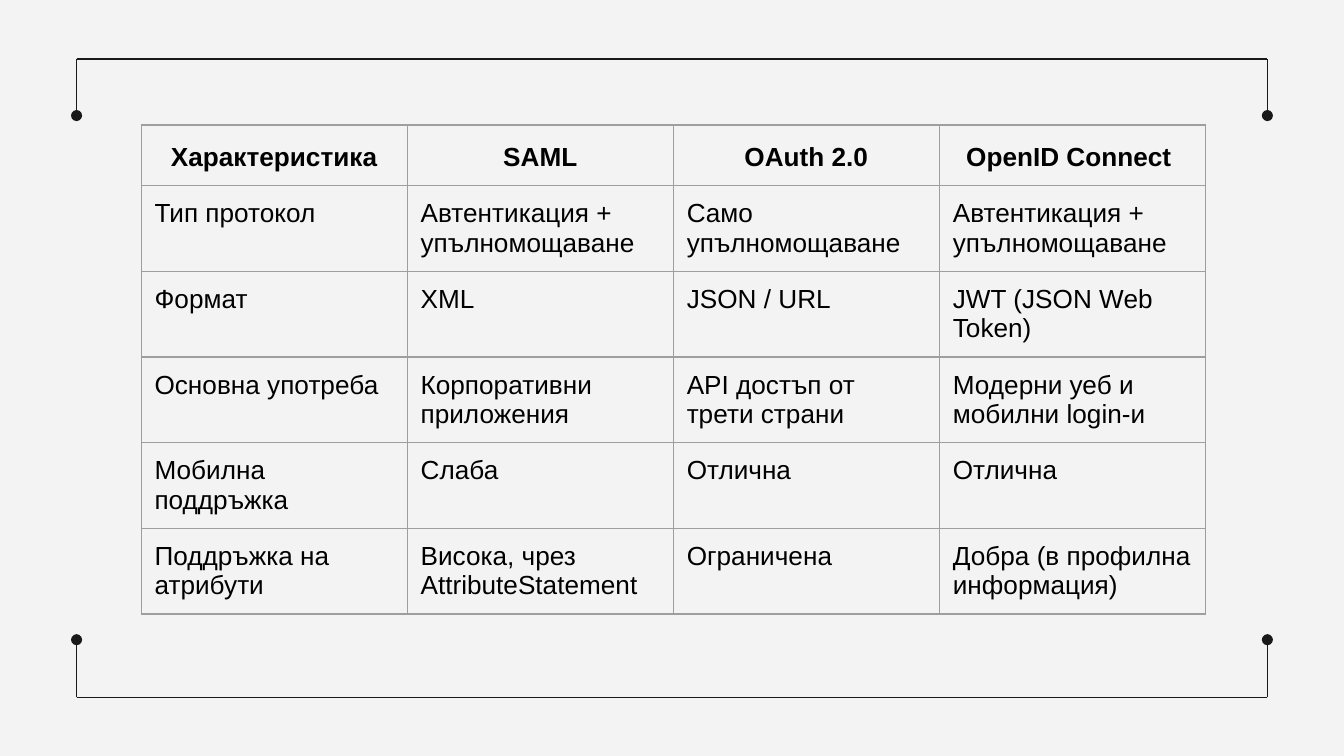
import pptx
import pptx.dml.color
import pptx.enum.shapes
import pptx.enum.text
import pptx.oxml.ns
import pptx.util
from lxml import etree

Inches = pptx.util.Inches
Pt = pptx.util.Pt

COLORS = {"background": "F3F3F3", "frame": "191919", "border": "9E9E9E", "text": "000000"}
FONT = "Arial"
LINE_WIDTH = Pt(0.75)

ROWS = [
    ["Характеристика", "SAML", "OAuth 2.0", "OpenID Connect "],
    ["Тип протокол", "Автентикация + упълномощаване", "Само упълномощаване",
     "Автентикация + упълномощаване"],
    ["Формат", "XML", "JSON / URL", "JWT (JSON Web Token)"],
    ["Основна употреба", "Корпоративни приложения", "API достъп от трети страни",
     "Модерни уеб и мобилни login-и"],
    ["Мобилна поддръжка", "Слаба", "Отлична", "Отлична"],
    ["Поддръжка на атрибути", "Висока, чрез AttributeStatement", "Ограничена",
     "Добра (в профилна информация)"],
]


def rgb(name):
    return pptx.dml.color.RGBColor.from_string(COLORS[name])


def add_sub(parent, tag, **attrs):
    return etree.SubElement(parent, pptx.oxml.ns.qn(tag), attrs)


def add_line(s, x1, y1, x2, y2, dot=False):
    """Draw a frame line, with a dot at its end if asked."""
    line = s.shapes.add_connector(
        pptx.enum.shapes.MSO_CONNECTOR.STRAIGHT,
        Inches(x1), Inches(y1), Inches(x2), Inches(y2))
    line.line.color.rgb = rgb("frame")
    line.line.width = LINE_WIDTH
    if dot:
        add_sub(line.line._get_or_add_ln(), "a:tailEnd", type="oval", w="med", len="med")
    add_sub(line._element.spPr, "a:effectLst")


def add_bracket(s, y, dot_y):
    """Draw a horizontal line with a dotted leg at each end."""
    left, right = 0.57, 9.43
    add_line(s, left, y, right, y)
    for x in (left, right):
        add_line(s, x, y, x, dot_y, dot=True)


def set_borders(cell):
    tc_pr = cell._tc.get_or_add_tcPr()
    for side in "LRTB":
        ln = add_sub(tc_pr, f"a:ln{side}", w=str(int(LINE_WIDTH)))
        add_sub(add_sub(ln, "a:solidFill"), "a:srgbClr", val=COLORS["border"])


def fill_cell(cell, text, header):
    set_borders(cell)
    cell.fill.background()
    cell.margin_left = cell.margin_right = Inches(0.1)
    cell.margin_top = cell.margin_bottom = Inches(0.1)
    p = cell.text_frame.paragraphs[0]
    p.text = text
    p.alignment = pptx.enum.text.PP_ALIGN.CENTER if header else pptx.enum.text.PP_ALIGN.LEFT
    if header:
        p.line_spacing = 1.15
    font = p.runs[0].font
    font.name = FONT
    font.size = Pt(14)
    font.bold = header
    font.color.rgb = rgb("text")


def add_comparison_table(s):
    col_width, row_height = 1.98, 0.42  # rows grow to fit their text
    n_rows, n_cols = len(ROWS), len(ROWS[0])
    table = s.shapes.add_table(
        n_rows, n_cols, Inches(1.05), Inches(0.93),
        Inches(col_width * n_cols), Inches(row_height * n_rows)).table
    table.first_row = table.horz_banding = False
    for col in table.columns:
        col.width = Inches(col_width)
    for i, texts in enumerate(ROWS):
        table.rows[i].height = Inches(row_height)
        for j, text in enumerate(texts):
            fill_cell(table.cell(i, j), text, header=i == 0)


def main():
    prs = pptx.Presentation()
    prs.slide_width = Inches(10)
    prs.slide_height = Inches(10 * 9 / 16)
    s = prs.slides.add_slide(prs.slide_layouts[6])
    s.background.fill.solid()
    s.background.fill.fore_color.rgb = rgb("background")

    # Frame above and below the table
    add_bracket(s, 0.44, 0.86)
    add_bracket(s, 5.19, 4.76)

    # Protocol comparison
    add_comparison_table(s)

    prs.save("out.pptx")


if __name__ == "__main__":
    main()
